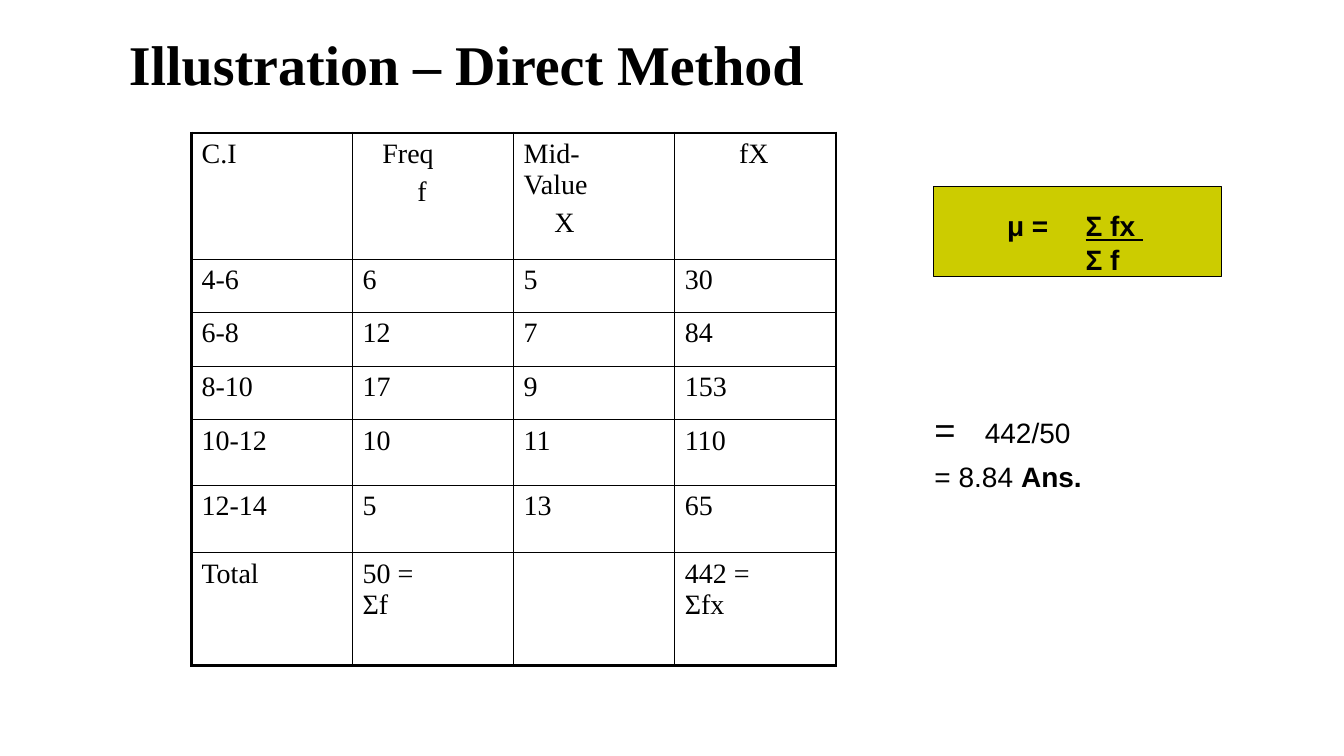
from dataclasses import dataclass

from lxml.etree import SubElement
from pptx import Presentation
from pptx.dml.color import RGBColor
from pptx.enum.shapes import MSO_SHAPE as Shape
from pptx.enum.text import MSO_ANCHOR as Anchor, MSO_AUTO_SIZE as AutoSize, PP_ALIGN as Align
from pptx.oxml.ns import qn
from pptx.util import Cm, Pt

# Content
TITLE = "Illustration – Direct Method"
HEADERS = ["C.I", "Freq\nf", "Mid-\vValue\nX", "fX"]
ROWS = [
    ["4-6", "6", "5", "30"],
    ["6-8", "12", "7", "84"],
    ["8-10", "17", "9", "153"],
    ["10-12", "10", "11", "110"],
    ["12-14", "5", "13", "65"],
    ["Total", "50 =\nΣf", "", "442 =\nΣfx"],
]
# Header paragraphs: (alignment, left margin, right margin) in cm
HEADER_FORMATS = {
    "Freq": (Align.CENTER, 0, 1.27),
    "f": (Align.CENTER, 0, 0.56),
    "X": (Align.LEFT, 1.02, 0),
    "fX": (Align.CENTER, 0, 0.08),
}
CELL_FORMAT = (Align.LEFT, 0.25, 0)


@dataclass(frozen=True)
class Theme:
    ink: RGBColor = RGBColor(0, 0, 0)
    formula_fill: RGBColor = RGBColor(0xCC, 0xCC, 0)
    serif: str = "Times New Roman"
    sans: str = "Arial"
    title: int = 40
    body: int = 20
    equals: int = 26
    thin: float = 1
    thick: float = 2.25


theme = Theme()

# Layout in cm
ROW_HEIGHTS = [3.18, 1.35, 1.35, 1.35, 1.65, 1.7, 2.84]
COLUMN_WIDTH = 4.06
TABLE_LEFT, TABLE_TOP = 4.83, 3.35
SIDE_LEFT, SIDE_WIDTH = 23.52, 7.26


def add_run(para, text, font, size, bold=False, underline=None):
    span = para.add_run()
    span.text = text
    span.font.name = font
    span.font.size = Pt(size)
    span.font.bold = bold
    span.font.underline = underline
    span.font.color.rgb = theme.ink


def set_indent(para, left=0, first=0, right=0, tab=None):
    properties = para._p.get_or_add_pPr()
    for name, value in (("marL", left), ("indent", first), ("marR", right)):
        properties.set(name, str(Cm(value)))
    if tab:
        tabs = SubElement(properties, qn("a:tabLst"))
        SubElement(tabs, qn("a:tab"), pos=str(Cm(tab)), algn="l")


def set_frame(frame, top, anchor=Anchor.TOP):
    frame.word_wrap = True
    frame.auto_size = AutoSize.NONE
    frame.vertical_anchor = anchor
    frame.margin_left = frame.margin_right = frame.margin_bottom = 0
    frame.margin_top = Cm(top)


def set_border(cell, side, width):
    line = SubElement(cell._tc.get_or_add_tcPr(), qn("a:ln" + side), w=str(Pt(width)))
    fill = SubElement(line, qn("a:solidFill"))
    SubElement(fill, qn("a:srgbClr"), val=str(theme.ink))


def fill_cell(cell, text, is_header):
    cell.margin_left = cell.margin_right = cell.margin_bottom = 0
    cell.margin_top = Cm(0.13)
    cell.vertical_anchor = Anchor.TOP
    for index, line in enumerate(text.split("\n")):
        para = cell.text_frame.add_paragraph() if index else cell.text_frame.paragraphs[0]
        align, left, right = HEADER_FORMATS.get(line, CELL_FORMAT)
        set_indent(para, left, right=right)
        para.alignment = align
        if index and is_header:
            para.space_before = Pt(5)
        for part_index, part in enumerate(line.split("\v")):
            if part_index:
                para.add_line_break()
            add_run(para, part, theme.serif, theme.body)


def add_title(page):
    box = page.shapes.title
    box.left, box.top, box.width, box.height = Cm(3.25), Cm(0.89), Cm(20.29), Cm(1.57)
    set_frame(box.text_frame, 0.03, Anchor.MIDDLE)
    para = box.text_frame.paragraphs[0]
    para.alignment = Align.LEFT
    para.line_spacing = 0.9
    para.space_before = Pt(0)
    add_run(para, TITLE, theme.serif, theme.title, bold=True)


def add_frequency_table(page):
    grid = [HEADERS] + ROWS
    last_row, last_column = len(grid) - 1, len(HEADERS) - 1
    table = page.shapes.add_table(
        len(grid), len(HEADERS), Cm(TABLE_LEFT), Cm(TABLE_TOP),
        Cm(COLUMN_WIDTH * len(HEADERS)), Cm(sum(ROW_HEIGHTS))).table
    table.horz_banding = table.first_row = False
    for column in table.columns:
        column.width = Cm(COLUMN_WIDTH)
    for r, (values, height) in enumerate(zip(grid, ROW_HEIGHTS)):
        table.rows[r].height = Cm(height)
        for c, text in enumerate(values):
            cell = table.cell(r, c)
            fill_cell(cell, text, r == 0)
            outer = {"L": c == 0, "R": c == last_column, "T": r == 0, "B": r == last_row}
            for side, is_outer in outer.items():
                set_border(cell, side, theme.thick if is_outer else theme.thin)
            cell.fill.background()


def add_answer(page):
    box = page.shapes.add_textbox(Cm(SIDE_LEFT), Cm(10), Cm(SIDE_WIDTH), Cm(2.51))
    set_frame(box.text_frame, 0.25)
    para = box.text_frame.paragraphs[0]
    set_indent(para, 0.03, tab=1.07)
    add_run(para, "=", theme.sans, theme.equals)
    add_run(para, "\t442/50", theme.sans, theme.body)
    para = box.text_frame.add_paragraph()
    set_indent(para, 0.03)
    para.space_before = Pt(6.5)
    add_run(para, "= 8.84 ", theme.sans, theme.body)
    add_run(para, "Ans.", theme.sans, theme.body, bold=True)


def add_formula(page):
    box = page.shapes.add_shape(
        Shape.RECTANGLE, Cm(SIDE_LEFT), Cm(4.7), Cm(SIDE_WIDTH), Cm(2.26))
    box.shadow.inherit = False
    box.fill.solid()
    box.fill.fore_color.rgb = theme.formula_fill
    box.line.color.rgb = theme.ink
    box.line.width = Pt(0.75)
    set_frame(box.text_frame, 0.56)
    para = box.text_frame.paragraphs[0]
    set_indent(para, 3.84, -1.98, tab=3.48)
    para.alignment = Align.LEFT
    add_run(para, "μ =\t", theme.sans, theme.body, bold=True)
    add_run(para, "Σ fx ", theme.sans, theme.body, bold=True, underline=True)
    para.add_line_break()
    add_run(para, "Σ f", theme.sans, theme.body, bold=True)


def main():
    deck = Presentation()
    deck.slide_width, deck.slide_height = Cm(33.87), Cm(19.05)
    page = deck.slides.add_slide(deck.slide_layouts[5])
    add_title(page)
    add_frequency_table(page)
    add_answer(page)
    add_formula(page)
    deck.save("out.pptx")


if __name__ == "__main__":
    main()
